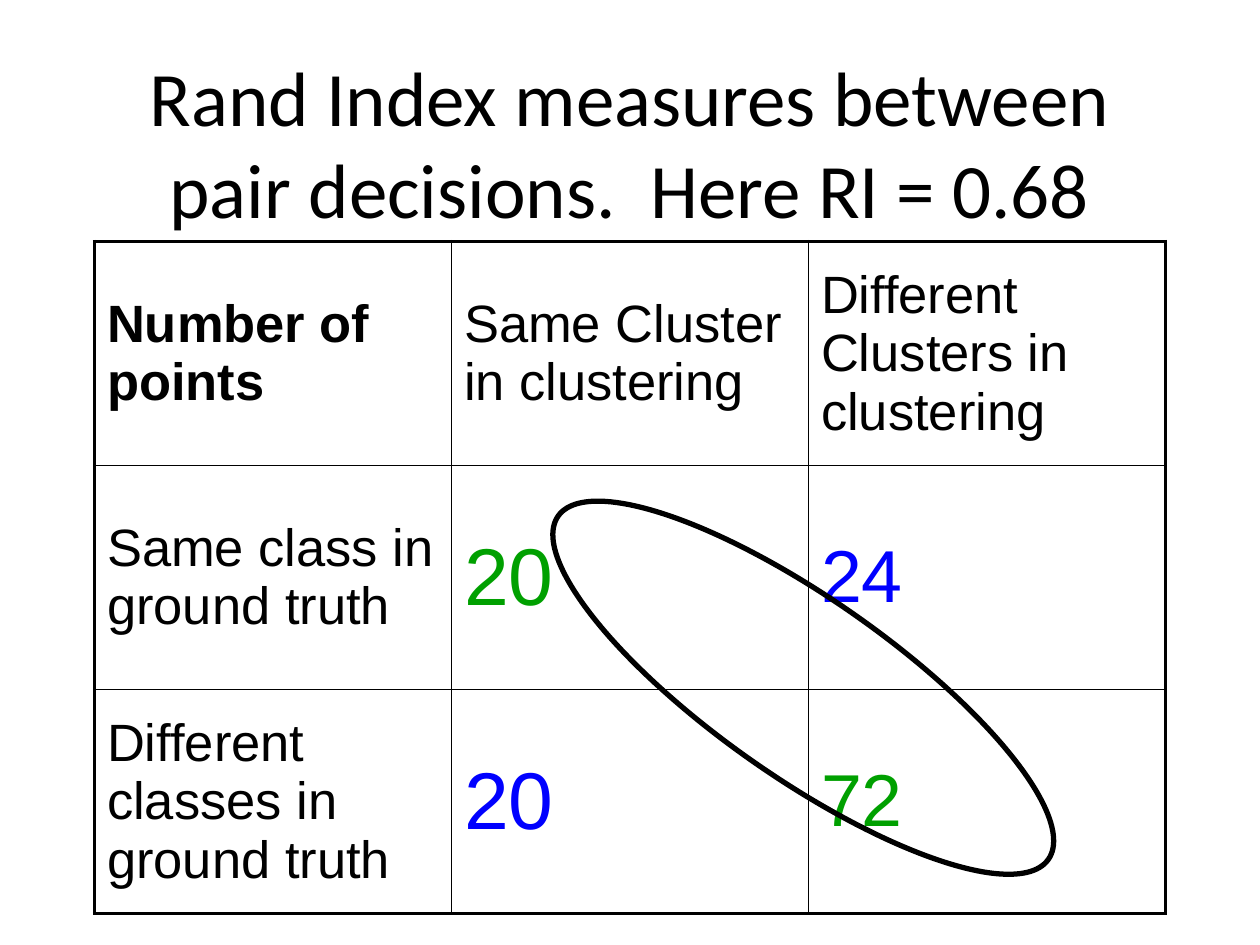
from lxml.etree import SubElement
from pptx import Presentation
from pptx.dml.color import RGBColor
from pptx.enum.shapes import MSO_SHAPE
from pptx.enum.text import MSO_ANCHOR, PP_ALIGN
from pptx.oxml.ns import qn
from pptx.util import Pt

BLACK, GREEN, BLUE = "000000", "00A000", "0000FF"


def color(value):
    return RGBColor.from_string(value)


def write(frame, text, size, font, value, align=PP_ALIGN.LEFT):
    frame.word_wrap = True
    paragraph = frame.paragraphs[0]
    paragraph.text = text
    paragraph.alignment = align
    paragraph.font.size = Pt(size)
    paragraph.font.name = font
    paragraph.font.color.rgb = color(value)
    return paragraph


deck = Presentation()
deck.slide_width, deck.slide_height = Pt(720), Pt(540)
page = deck.slides.add_slide(deck.slide_layouts[6])

# Title
title = page.shapes.add_textbox(Pt(42), Pt(42), Pt(636), Pt(78))
title.text_frame.vertical_anchor = MSO_ANCHOR.MIDDLE
write(title.text_frame, "Rand Index measures between pair decisions.  Here RI = 0.68",
      44, "Calibri", BLACK, PP_ALIGN.CENTER)

# Table of pair counts: text, size, color
rows = [
    [("Number of points", 30, BLACK), ("Same Cluster in clustering", 30, BLACK),
     ("Different Clusters in clustering", 30, BLACK)],
    [("Same class in ground truth", 30, BLACK), ("20", 46, GREEN), ("24", 42, BLUE)],
    [("Different classes in ground truth", 30, BLACK), ("20", 46, BLUE), ("72", 42, GREEN)],
]
last = len(rows) - 1
table = page.shapes.add_table(3, 3, Pt(54), Pt(138), Pt(612), Pt(384)).table
table.first_row = table.horz_banding = False
for column in table.columns:
    column.width = Pt(204)
for row in table.rows:
    row.height = Pt(128)

for i, row in enumerate(rows):
    for j, (text, size, value) in enumerate(row):
        cell = table.cell(i, j)
        cell.vertical_anchor = MSO_ANCHOR.MIDDLE
        paragraph = write(cell.text_frame, text, size, "Arial", value)
        paragraph.font.bold = i == j == 0

        # Thick outer frame, thin inner rules
        properties = cell._tc.get_or_add_tcPr()
        outer = {"L": j == 0, "R": j == last, "T": i == 0, "B": i == last}
        for side, thick in outer.items():
            width = Pt(2.25) if thick else Pt(1)
            line = SubElement(properties, qn(f"a:ln{side}"), w=str(width))
            fill = SubElement(line, qn("a:solidFill"))
            SubElement(fill, qn("a:srgbClr"), val=BLACK)
        cell.fill.background()

# Ellipse around the agreeing pairs
ellipse = page.shapes.add_shape(MSO_SHAPE.OVAL, Pt(288), Pt(342), Pt(342), Pt(102))
ellipse.rotation = 35
ellipse.shadow.inherit = False
ellipse.fill.background()
ellipse.line.color.rgb = color(BLACK)
ellipse.line.width = Pt(3)

deck.save("out.pptx")
